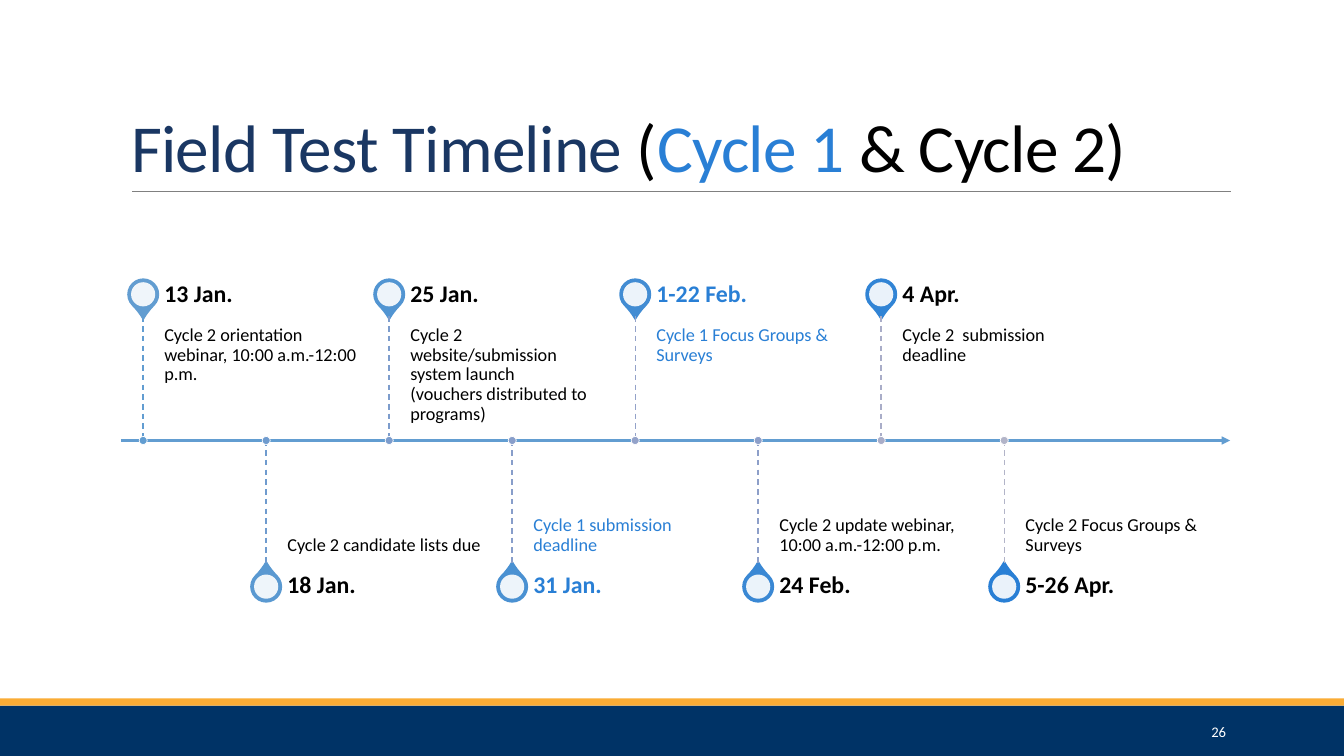
from dataclasses import dataclass

from pptx import Presentation
from pptx.dml.color import RGBColor
from pptx.enum.dml import MSO_LINE
from pptx.enum.shapes import MSO_CONNECTOR, MSO_SHAPE
from pptx.enum.text import MSO_ANCHOR, MSO_AUTO_SIZE, PP_ALIGN
from pptx.oxml.xmlchemy import OxmlElement
from pptx.util import Pt

RECT, OVAL, TEARDROP = MSO_SHAPE.RECTANGLE, MSO_SHAPE.OVAL, MSO_SHAPE.TEAR
STRAIGHT = MSO_CONNECTOR.STRAIGHT
DASH = MSO_LINE.DASH
TOP, MIDDLE, BOTTOM = MSO_ANCHOR.TOP, MSO_ANCHOR.MIDDLE, MSO_ANCHOR.BOTTOM
LEFT, RIGHT = PP_ALIGN.LEFT, PP_ALIGN.RIGHT
PX = 9144


@dataclass(frozen=True)
class Theme:
    font: str = "Calibri"
    navy: str = "1A3763"
    blue: str = "297FD5"
    black: str = "000000"
    white: str = "FFFFFF"
    axis: str = "629DD1"
    rule: str = "808080"
    footer: str = "003366"
    gold: str = "FAAC35"
    title: float = 48
    date: float = 17
    body: float = 13
    number: float = 10.5


T = Theme()

TITLE = [
    ("Field Test Timeline ", T.navy),
    ("(", T.black),
    ("Cycle 1 ", T.blue),
    ("& Cycle 2)", T.black),
]
PAGE = "26"
EVENTS = [
    ("13 Jan.", ["Cycle 2 orientation webinar, 10:00 a.m.-12:00 p.m."], T.black, "629DD1", "629DD1"),
    ("18 Jan.", ["Cycle 2 candidate lists due"], T.black, "5A99D1", "6F9BCE"),
    ("25 Jan.", ["Cycle 2 website/submission system launch", "(vouchers distributed to programs)"],
     T.black, "5295D2", "7C9CCC"),
    ("31 Jan.", ["Cycle 1 submission deadline"], T.blue, "4A91D2", "889ECA"),
    ("1-22 Feb.", ["Cycle 1 Focus Groups & Surveys"], T.blue, "428CD3", "93A2C9"),
    ("24 Feb.", ["Cycle 2 update webinar, 10:00 a.m.-12:00 p.m."], T.black, "3A88D4", "8D9FC9"),
    ("4 Apr.", ["Cycle 2  submission deadline"], T.black, "3184D5", "A9ADC8"),
    ("5-26 Apr.", ["Cycle 2 Focus Groups & Surveys"], T.black, "297FD5", "B2B4C8"),
]

AXIS_Y, AXIS_LEFT, AXIS_RIGHT = 437, 120, 1220
FIRST_X, STEP = 142, 122
STEM, DATE_H, TEXT_W, TEXT_GAP = 123, 43, 202, 21
PIN, HOLE, DOT = 30, 24, 8


def emu(*lengths):
    return [n * PX for n in lengths]


def rgb(value):
    return RGBColor.from_string(value)


def add_block(s, kind, box, fill, line=None, width=0):
    sp = s.shapes.add_shape(kind, *emu(*box))
    sp.shadow.inherit = False
    sp.fill.solid()
    sp.fill.fore_color.rgb = rgb(fill)
    if line:
        sp.line.color.rgb = rgb(line)
        sp.line.width = Pt(width)
    else:
        sp.line.fill.background()
    return sp


def add_round(s, kind, x, y, size, *style):
    return add_block(s, kind, (x - size // 2, y - size // 2, size, size), *style)


def add_line(s, ends, color, width, dash=None, arrow=False):
    cn = s.shapes.add_connector(STRAIGHT, *emu(*ends))
    cn.line.color.rgb = rgb(color)
    cn.line.width = Pt(width)
    if dash:
        cn.line.dash_style = dash
    if arrow:
        tail = OxmlElement("a:tailEnd")
        tail.set("type", "triangle")
        cn.line._get_or_add_ln().append(tail)
    cn._element.spPr.append(OxmlElement("a:effectLst"))


def add_run(p, text, size, color, bold=False):
    r = p.add_run()
    r.text = text
    r.font.color.rgb = rgb(color)
    for name, value in {"name": T.font, "size": Pt(size), "bold": bold}.items():
        setattr(r.font, name, value)
    return r


def set_frame(tf, anchor, insets):
    margins = zip(("left", "top", "right", "bottom"), emu(*insets))
    fmt = {f"margin_{side}": value for side, value in margins}
    fmt |= {"word_wrap": True, "auto_size": MSO_AUTO_SIZE.NONE, "vertical_anchor": anchor}
    for name, value in fmt.items():
        setattr(tf, name, value)


def add_text(s, box, lines, size, color, anchor, insets, bold=False, align=LEFT, spacing=0.9):
    tf = s.shapes.add_textbox(*emu(*box)).text_frame
    set_frame(tf, anchor, insets)
    for i, line in enumerate(lines):
        p = tf.add_paragraph() if i else tf.paragraphs[0]
        p.alignment, p.line_spacing = align, spacing
        add_run(p, line, size, color, bold)


def add_title(s):
    sp = s.shapes.title
    sp.left, sp.top, sp.width, sp.height = emu(120, 31, 1100, 159)
    set_frame(sp.text_frame, BOTTOM, (10, 5, 10, 5))
    p = sp.text_frame.paragraphs[0]
    p.alignment, p.line_spacing = LEFT, 0.85
    for text, color in TITLE:
        r = add_run(p, text, T.title, color)
        r.font._element.set("spc", "-50")


def add_event(s, index, date, lines, color, pin_color, stem_color):
    above = index % 2 == 0
    side = -1 if above else 1
    x = FIRST_X + index * STEP
    stem_end = AXIS_Y + side * STEM
    pin_y = stem_end + side * 22
    text_x = x + TEXT_GAP

    pin = add_round(s, TEARDROP, x, pin_y, PIN, pin_color, pin_color, 1.25)
    pin.adjustments[0] = 1.15
    pin.rotation = 135 if above else 315
    hole = add_round(s, OVAL, x, pin_y, HOLE, T.white)
    alpha = OxmlElement("a:alpha")
    alpha.set("val", "90000")
    hole._element.spPr.find(".//{*}srgbClr").append(alpha)

    add_text(s, (text_x, min(AXIS_Y, stem_end), TEXT_W, STEM), lines, T.body, color,
             TOP if above else BOTTOM, (0, 9, 9, 14) if above else (0, 14, 0, 9))
    add_text(s, (text_x, stem_end - DATE_H if above else stem_end, TEXT_W, DATE_H),
             [date], T.date, color, MIDDLE, (0, 0, 12, 0), bold=True)
    add_line(s, (x, min(AXIS_Y, stem_end), x, max(AXIS_Y, stem_end)), stem_color, 1, DASH)
    add_round(s, OVAL, x, AXIS_Y, DOT, stem_color, T.white, 0.5)


def main():
    prs = Presentation()
    prs.slide_width, prs.slide_height = emu(1333, 750)
    s = prs.slides.add_slide(prs.slide_layouts[5])
    add_block(s, RECT, (0, 700, 1333, 50), T.footer)
    add_block(s, RECT, (0, 693, 1333, 7), T.gold)
    add_line(s, (131, 190, 1221, 190), T.rule, 0.5)
    add_title(s)
    add_text(s, (1083, 706, 143, 40), [PAGE], T.number, T.white, MIDDLE, (10, 5, 10, 5),
             align=RIGHT, spacing=1.0)
    add_line(s, (AXIS_LEFT, AXIS_Y, AXIS_RIGHT, AXIS_Y), T.axis, 1.5, arrow=True)
    for index, event in enumerate(EVENTS):
        add_event(s, index, *event)
    prs.save("out.pptx")


if __name__ == "__main__":
    main()
